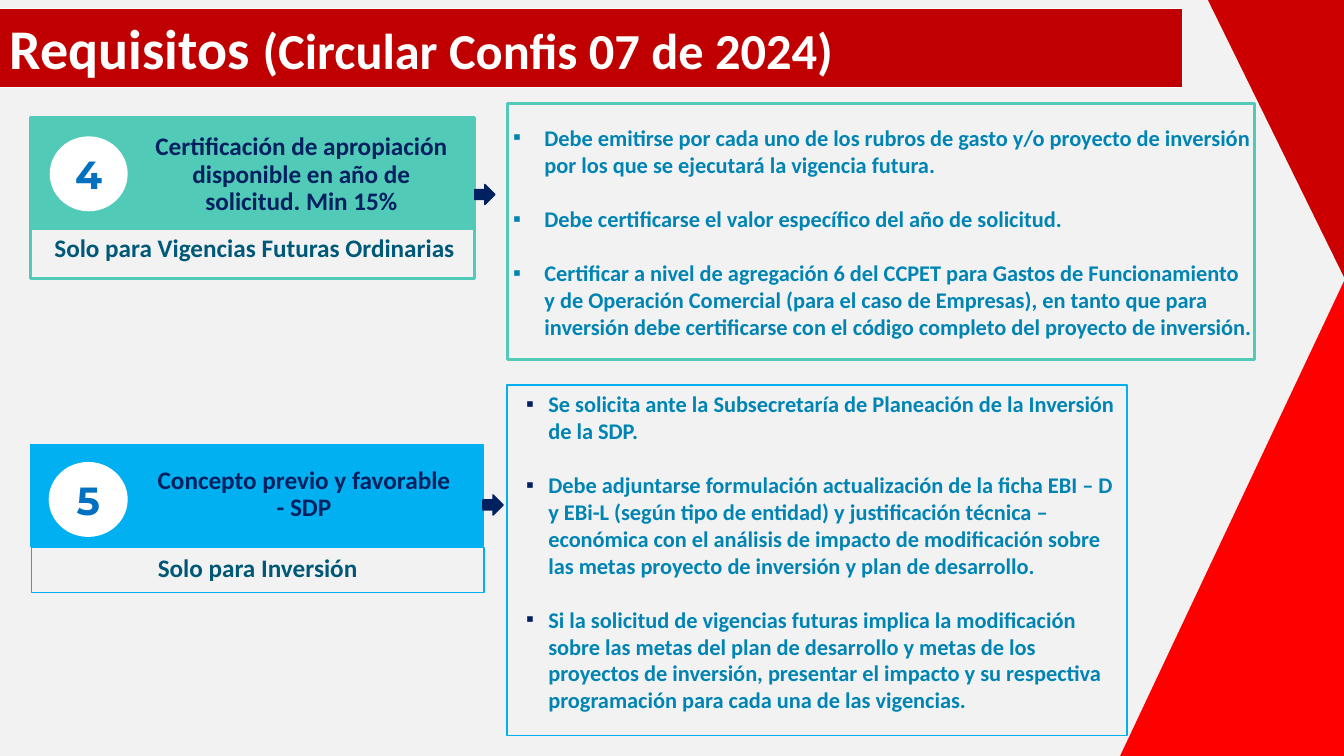
import pptx
import pptx.util
import pptx.dml.color
import pptx.enum.shapes
import pptx.enum.text
import pptx.oxml.ns
from lxml import etree
from pptx.util import Inches

SHAPE = pptx.enum.shapes.MSO_SHAPE
ALIGN = pptx.enum.text.PP_ALIGN
ANCHOR = pptx.enum.text.MSO_ANCHOR
WHITE, NAVY, TEAL, SKY = "FFFFFF", "002060", "52CAB8", "00B0F0"
BODY, NOTE, NUMBER = "0084B4", "005878", "0070C0"
DEFAULT_INSETS = (0.1, 0.05, 0.1, 0.05)
TIGHT_INSETS = (0.06, 0, 0.02, 0)

CERTIFICATION_RULES = [
    "Debe emitirse por cada uno de los rubros de gasto y/o proyecto de inversión por los que se ejecutará la vigencia futura.",
    "Debe certificarse el valor específico del año de solicitud.",
    "Certificar a nivel de agregación 6 del CCPET para Gastos de Funcionamiento y de Operación Comercial (para el caso de Empresas), en tanto que para inversión debe certificarse con el código completo del proyecto de inversión.",
]
CONCEPT_RULES = [
    "Se solicita ante la Subsecretaría de Planeación de la Inversión de la SDP.",
    "Debe adjuntarse formulación actualización de la ficha EBI – D y EBi-L (según tipo de entidad) y justificación técnica – económica con el análisis de impacto de modificación sobre las metas proyecto de inversión y plan de desarrollo.",
    "Si la solicitud de vigencias futuras implica la modificación sobre las metas del plan de desarrollo y metas de los proyectos de inversión, presentar el impacto y su respectiva programación para cada una de las vigencias.",
]


def rgb(color):
    return pptx.dml.color.RGBColor.from_string(color)


def add_box(slide, kind, place, fill=None, line=None, width=1):
    box = slide.shapes.add_shape(kind, *map(Inches, place))
    box.shadow.inherit = False
    if fill:
        box.fill.solid()
        box.fill.fore_color.rgb = rgb(fill)
    else:
        box.fill.background()
    if line:
        box.line.color.rgb = rgb(line)
        box.line.width = pptx.util.Pt(width)
    else:
        box.line.fill.background()
    return box


def prepare_frame(box, anchor, insets):
    frame = box.text_frame
    frame.word_wrap = True
    frame.vertical_anchor = anchor
    frame.margin_left, frame.margin_top, frame.margin_right, frame.margin_bottom = map(Inches, insets)
    return frame


def add_run(paragraph, text, size=18, color=NAVY, font="Calibri"):
    run = paragraph.add_run()
    run.text = text
    run.font.size = pptx.util.Pt(size)
    run.font.name = font
    run.font.bold = True
    run.font.color.rgb = rgb(color)


def write(box, text, anchor=ANCHOR.MIDDLE, insets=TIGHT_INSETS, spacing=None, **style):
    paragraph = prepare_frame(box, anchor, insets).paragraphs[0]
    paragraph.alignment = ALIGN.CENTER
    if spacing:
        paragraph.line_spacing = spacing
    add_run(paragraph, text, **style)


def add_bullet(paragraph, color, hanging):
    properties = paragraph._p.get_or_add_pPr()
    properties.set("marL", str(Inches(0.31)))
    properties.set("indent", str(-Inches(hanging)))
    qn = pptx.oxml.ns.qn
    bullet_color = etree.SubElement(properties, qn("a:buClr"))
    etree.SubElement(bullet_color, qn("a:srgbClr"), val=color)
    etree.SubElement(properties, qn("a:buFont"), typeface="Arial")
    etree.SubElement(properties, qn("a:buChar"), char="▪")


def write_rules(box, rules, bullet_color, hanging, anchor, insets):
    frame = prepare_frame(box, anchor, insets)
    for index, rule in enumerate(rules):
        paragraph = frame.add_paragraph() if index else frame.paragraphs[0]
        add_bullet(paragraph, bullet_color, hanging)
        paragraph.alignment = ALIGN.LEFT
        if index:
            paragraph.space_before = pptx.util.Pt(19.5)
        add_run(paragraph, rule, size=16, color=BODY)


def add_requirement(slide, number, heading, panel, heading_place, circle, color, width):
    add_box(slide, SHAPE.RECTANGLE, panel, color, color, width)
    write(add_box(slide, SHAPE.RECTANGLE, heading_place), heading, spacing=0.9)
    badge = add_box(slide, SHAPE.OVAL, circle, WHITE, WHITE)
    write(badge, number, insets=DEFAULT_INSETS, size=28, color=NUMBER, font="Montserrat")


def add_arrow(slide, left, top):
    add_box(slide, SHAPE.RIGHT_ARROW, (left, top, 0.2, 0.2), NAVY, NAVY)


def add_backdrop(slide):
    slide.background.fill.solid()
    slide.background.fill.fore_color.rgb = rgb("F2F2F2")
    lower = add_box(slide, SHAPE.RIGHT_TRIANGLE, (11.11, 2.77, 2.23, 4.73), "FF0000")
    lower._element.spPr.xfrm.set("flipH", "1")
    upper = add_box(slide, SHAPE.RIGHT_TRIANGLE, (11.98, 0, 1.36, 2.77), "CC0000")
    upper.rotation = 180


def add_title(slide):
    banner = add_box(slide, SHAPE.RECTANGLE, (0, 0.08, 11.73, 0.79), "C00000", WHITE, 0.75)
    title = prepare_frame(banner, ANCHOR.TOP, DEFAULT_INSETS).paragraphs[0]
    title.alignment = ALIGN.LEFT
    add_run(title, "Requisitos ", size=40, color=WHITE)
    add_run(title, "(Circular Confis 07 de 2024)", size=36, color=WHITE)


def main():
    deck = pptx.Presentation()
    deck.slide_width, deck.slide_height = Inches(13.33), Inches(7.5)
    slide = deck.slides.add_slide(deck.slide_layouts[6])
    add_backdrop(slide)
    add_title(slide)

    add_requirement(slide, "4", "Certificación de apropiación disponible en año de solicitud. Min 15%",
                    (0.3, 1.17, 4.41, 1.1), (1.42, 1.32, 3.1, 0.83), (0.5, 1.36, 0.76, 0.73), TEAL, 2)
    rules = add_box(slide, SHAPE.RECTANGLE, (5.03, 1.03, 7.41, 2.54), line=TEAL, width=2)
    write_rules(rules, CERTIFICATION_RULES, BODY, 0.31, ANCHOR.MIDDLE, TIGHT_INSETS)
    scope = add_box(slide, SHAPE.RECTANGLE, (0.3, 2.16, 4.41, 0.6), line=TEAL, width=2)
    write(scope, "Solo para Vigencias Futuras Ordinarias", color=NOTE)
    add_arrow(slide, 4.71, 1.83)

    add_requirement(slide, "5", "Concepto previo y favorable - SDP",
                    (0.3, 4.41, 4.49, 1.01), (1.44, 4.53, 3.11, 0.76), (0.49, 4.59, 0.77, 0.73), SKY, 1)
    rules = add_box(slide, SHAPE.RECTANGLE, (5.03, 3.82, 6.15, 3.48), line=SKY)
    write_rules(rules, CONCEPT_RULES, NAVY, 0.22, ANCHOR.TOP, DEFAULT_INSETS)
    scope = add_box(slide, SHAPE.RECTANGLE, (0.31, 5.43, 4.49, 0.45), line=SKY)
    write(scope, "Solo para Inversión", anchor=ANCHOR.TOP, insets=DEFAULT_INSETS, color=NOTE)
    add_arrow(slide, 4.79, 4.91)

    deck.save("out.pptx")


if __name__ == "__main__":
    main()
